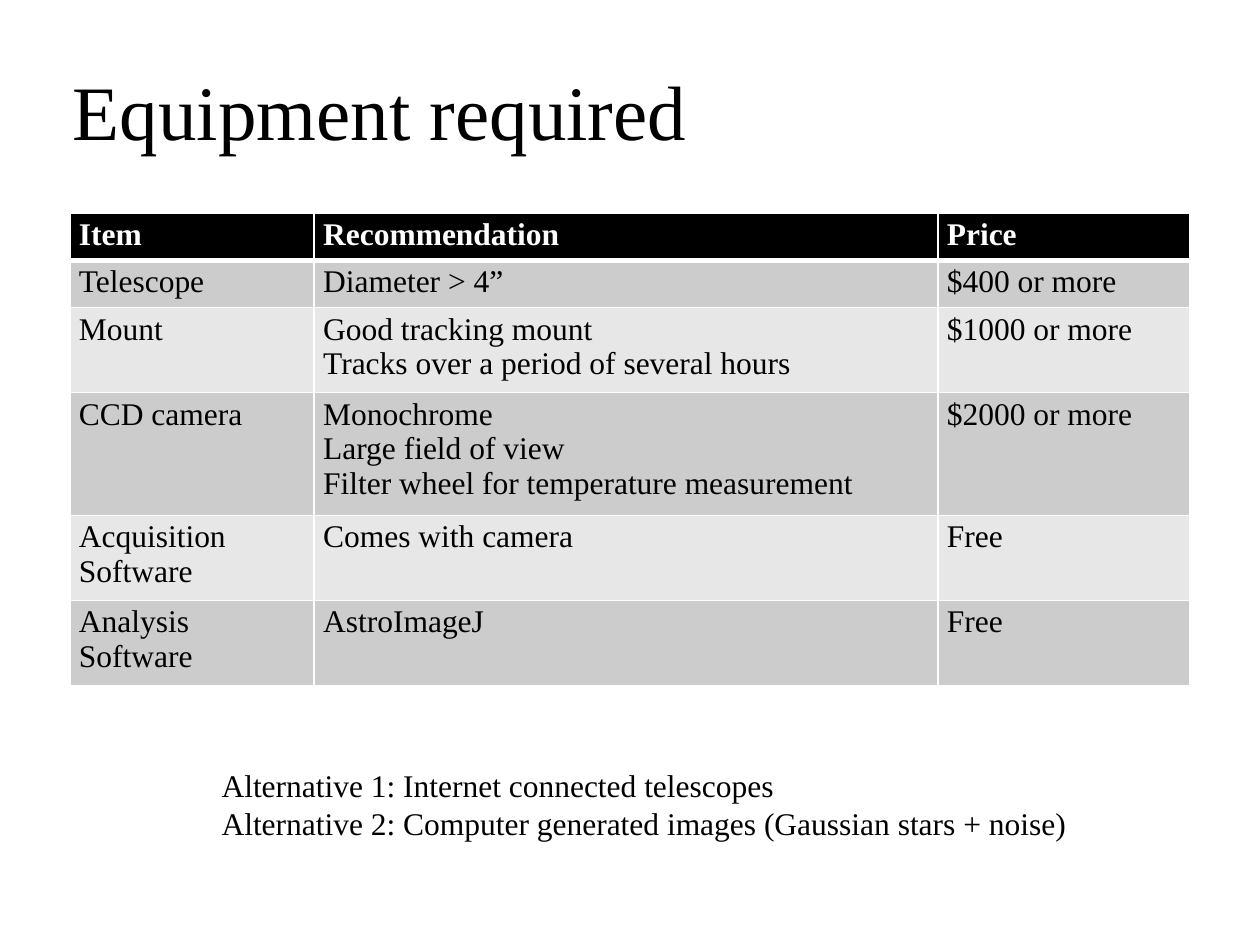
"""Build the slide that lists the equipment required, with prices."""
from typing import NamedTuple

from lxml.etree import SubElement
from pptx import Presentation
from pptx.dml.color import RGBColor
from pptx.enum.text import MSO_ANCHOR as Anchor, MSO_AUTO_SIZE as Fit
from pptx.oxml.ns import qn
from pptx.util import Pt

FONT = "Times New Roman"
BLACK, WHITE = "000000", "FFFFFF"
BANDS = ("CCCCCC", "E7E7E7")
WIDTHS = (139.6, 356.4, 144)


class Row(NamedTuple):
    item: str
    advice: str
    price: str
    lines: int = 1


class Label(NamedTuple):
    text: str
    left: float
    top: float
    width: float
    height: float
    size: float
    wrap: bool = True


ROWS = (
    Row("Item", "Recommendation", "Price"),
    Row("Telescope", "Diameter > 4”", "$400 or more"),
    Row("Mount", "Good tracking mount\nTracks over a period of several hours",
        "$1000 or more", 2),
    Row("CCD camera", "Monochrome\nLarge field of view\n"
        "Filter wheel for temperature measurement", "$2000 or more", 3),
    Row("Acquisition Software", "Comes with camera", "Free", 2),
    Row("Analysis Software", "AstroImageJ", "Free", 2),
)
TITLE = Label("Equipment required", 34.6, 26.6, 620.6, 78.5, 44)
NOTE = Label("Alternative 1: Internet connected telescopes\n"
             "Alternative 2: Computer generated images (Gaussian stars + noise)",
             119.5, 434.2, 502.6, 51.1, 18, False)


def paint(color, code: str) -> None:
    color.rgb = RGBColor.from_string(code)


def style(frame, size: float, code: str, bold: bool = False) -> None:
    for para in frame.paragraphs:
        for run in para.runs:
            run.font.name = FONT
            run.font.size = Pt(size)
            run.font.bold = bold
            paint(run.font.color, code)


def add_label(slide, label: Label):
    box = slide.shapes.add_textbox(Pt(label.left), Pt(label.top),
                                   Pt(label.width), Pt(label.height))
    frame = box.text_frame
    frame.word_wrap = label.wrap
    frame.text = label.text
    style(frame, label.size, BLACK)
    return frame


def add_edge(cell, side: str, width: float) -> None:
    props = cell._tc.get_or_add_tcPr()
    line = SubElement(props, qn(f"a:{side}"), w=str(Pt(width)))
    fill = SubElement(line, qn("a:solidFill"))
    SubElement(fill, qn("a:srgbClr"), val=WHITE)


def fill_cell(cell, text: str, row: int) -> None:
    head = row == 0
    cell.text = text
    cell.margin_left = cell.margin_right = Pt(5.2)
    cell.margin_top = cell.margin_bottom = Pt(2.6)
    style(cell.text_frame, 18, WHITE if head else BLACK, head)
    edges = {"lnL": 1, "lnR": 1, "lnT": 3 if row == 1 else 1,
             "lnB": 3 if head else 1}
    for side, width in edges.items():
        add_edge(cell, side, width)
    cell.fill.solid()
    paint(cell.fill.fore_color, BLACK if head else BANDS[(row - 1) % 2])


def add_grid(slide, rows: tuple[Row, ...]) -> None:
    heights = [27 + 21.6 * (row.lines - 1) for row in rows]
    grid = slide.shapes.add_table(len(rows), len(WIDTHS), Pt(39.9), Pt(121.7),
                                  Pt(sum(WIDTHS)), Pt(sum(heights))).table
    for col, width in zip(grid.columns, WIDTHS):
        col.width = Pt(width)
    for i, (row, height) in enumerate(zip(rows, heights)):
        grid.rows[i].height = Pt(height)
        for j, text in enumerate((row.item, row.advice, row.price)):
            fill_cell(grid.cell(i, j), text, i)


def main() -> None:
    deck = Presentation()
    deck.slide_width, deck.slide_height = Pt(720), Pt(540)
    slide = deck.slides.add_slide(deck.slide_layouts[6])
    title = add_label(slide, TITLE)
    title.vertical_anchor = Anchor.MIDDLE
    title.paragraphs[0].line_spacing = 0.9
    add_grid(slide, ROWS)
    add_label(slide, NOTE).auto_size = Fit.SHAPE_TO_FIT_TEXT
    deck.save("out.pptx")


if __name__ == "__main__":
    main()
